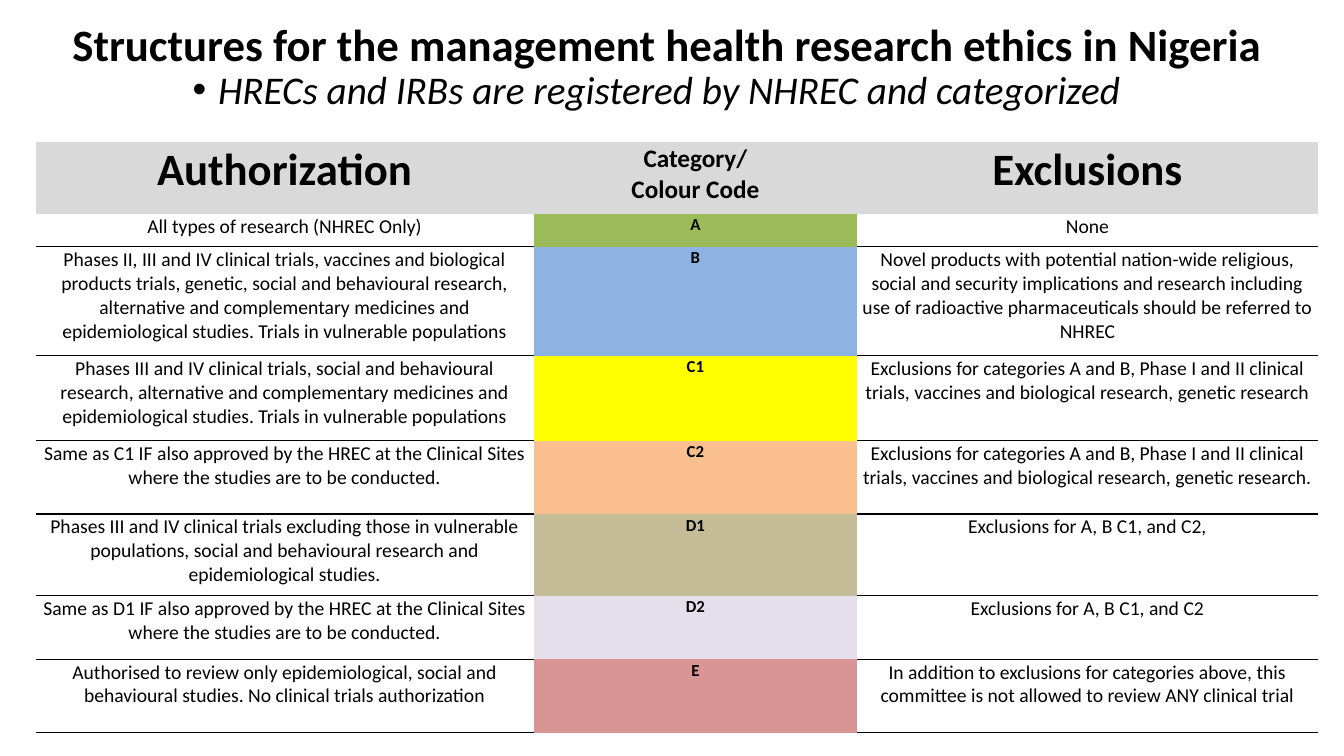
from lxml.etree import SubElement
from pptx import Presentation
from pptx.dml.color import RGBColor
from pptx.enum.text import MSO_ANCHOR, MSO_AUTO_SIZE, PP_ALIGN
from pptx.oxml import parse_xml
from pptx.oxml.ns import nsdecls, qn
from pptx.util import Cm, Pt

FONT = "Calibri"
BLACK = RGBColor(0x00, 0x00, 0x00)
HEADER_GREY = RGBColor(0xD9, 0xD9, 0xD9)
GREEN = RGBColor(0x9B, 0xBB, 0x59)
BLUE = RGBColor(0x8D, 0xB3, 0xE2)
YELLOW = RGBColor(0xFF, 0xFF, 0x00)
ORANGE = RGBColor(0xFA, 0xBF, 0x8F)
KHAKI = RGBColor(0xC4, 0xBC, 0x96)
LILAC = RGBColor(0xE5, 0xDF, 0xEC)
RED = RGBColor(0xD9, 0x95, 0x94)

PLAIN_TABLE_STYLE = "{2D5ABB26-0587-4C30-8999-92F81FD0307C}"
COLUMN_WIDTHS = (12.55, 8.15, 11.61)
ROW_HEIGHTS = (1.8, 0.84, 2.74, 2.14, 1.85, 2.06, 1.6, 1.85)

# Authorization, category, category colour, exclusions
CATEGORIES = [
    ("All types of research (NHREC Only)", "A", GREEN, "None"),
    ("Phases II, III and IV clinical trials, vaccines and biological products "
     "trials, genetic, social and behavioural research, alternative and "
     "complementary medicines and epidemiological studies. Trials in "
     "vulnerable populations", "B", BLUE,
     "Novel products with potential nation-wide religious, social and security "
     "implications and research including use of radioactive pharmaceuticals "
     "should be referred to NHREC"),
    ("Phases III and IV clinical trials, social and behavioural research, "
     "alternative and complementary medicines and epidemiological studies. "
     "Trials in vulnerable populations", "C1", YELLOW,
     "Exclusions for categories A and B, Phase I and II clinical trials, "
     "vaccines and biological research, genetic research"),
    ("Same as C1 IF also approved by the HREC at the Clinical Sites where the "
     "studies are to be conducted.", "C2", ORANGE,
     "Exclusions for categories A and B, Phase I and II clinical trials, "
     "vaccines and biological research, genetic research."),
    ("Phases III and IV clinical trials excluding those in vulnerable "
     "populations, social and behavioural research and epidemiological "
     "studies.", "D1", KHAKI, "Exclusions for A, B C1, and C2,"),
    ("Same as D1 IF also approved by the HREC at the Clinical Sites where the "
     "studies are to be conducted.", "D2", LILAC,
     "Exclusions for A, B C1, and C2"),
    ("Authorised to review only epidemiological, social and behavioural "
     "studies. No clinical trials authorization", "E", RED,
     "In addition to exclusions for categories above, this committee is not "
     "allowed to review ANY clinical trial"),
]


def add_span(para, text, size, bold=False, italic=False):
    span = para.add_run()
    span.text = text
    font = span.font
    font.name, font.size, font.bold, font.italic = FONT, Pt(size), bold, italic
    font.color.rgb = BLACK


def place_text(box, left, top, width, height, anchor):
    """Move a placeholder and return its first paragraph, ready for text."""
    box.left, box.top, box.width, box.height = map(Cm, (left, top, width, height))
    frame = box.text_frame
    frame.auto_size = MSO_AUTO_SIZE.NONE
    frame.word_wrap = True
    frame.vertical_anchor = anchor
    para = frame.paragraphs[0]
    para.alignment = PP_ALIGN.LEFT
    para.line_spacing = 0.9
    para.space_before = Pt(0)
    return para


def add_bullet(para, indent):
    properties = para._p.get_or_add_pPr()
    properties.set("marL", str(indent))
    properties.set("indent", str(-indent))
    SubElement(properties, qn("a:buFont")).set("typeface", "Arial")
    SubElement(properties, qn("a:buChar")).set("char", "•")


def draw_bottom_border(cell):
    line = parse_xml(
        f'<a:lnB {nsdecls("a")} w="{Pt(1)}"><a:solidFill>'
        f'<a:srgbClr val="{BLACK}"/></a:solidFill></a:lnB>')
    cell._tc.get_or_add_tcPr().insert(0, line)


def fill_cell(cell, lines, size, bold=False, colour=None):
    cell.margin_left = cell.margin_right = cell.margin_top = Cm(0.03)
    cell.margin_bottom = Cm(0)
    cell.vertical_anchor = MSO_ANCHOR.TOP
    if colour is None:
        cell.fill.background()
    else:
        cell.fill.solid()
        cell.fill.fore_color.rgb = colour
    frame = cell.text_frame
    for number, text in enumerate(lines):
        para = frame.add_paragraph() if number else frame.paragraphs[0]
        para.alignment = PP_ALIGN.CENTER
        add_span(para, text, size, bold)


def add_category_table(page):
    frame = page.shapes.add_table(
        len(ROW_HEIGHTS), len(COLUMN_WIDTHS), Cm(0.9), Cm(3.58),
        Cm(sum(COLUMN_WIDTHS)), Cm(sum(ROW_HEIGHTS)))
    table = frame.table
    table.horz_banding = False
    table._tbl.tblPr.find(qn("a:tableStyleId")).text = PLAIN_TABLE_STYLE
    for column, width in zip(table.columns, COLUMN_WIDTHS):
        column.width = Cm(width)
    for row, height in zip(table.rows, ROW_HEIGHTS):
        row.height = Cm(height)

    # Header row
    headers = [(["Authorization"], 32), (["Category/", "Colour Code"], 18),
               (["Exclusions"], 32)]
    for column, (lines, size) in enumerate(headers):
        fill_cell(table.cell(0, column), lines, size, True, HEADER_GREY)

    # One row per category
    for row, (authorization, category, colour, exclusions) in enumerate(CATEGORIES, 1):
        fill_cell(table.cell(row, 1), [category], 12, True, colour)
        for column, text in ((0, authorization), (2, exclusions)):
            fill_cell(table.cell(row, column), [text], 14)
            draw_bottom_border(table.cell(row, column))


def main():
    deck = Presentation()
    deck.slide_width, deck.slide_height = Cm(33.87), Cm(19.05)
    page = deck.slides.add_slide(deck.slide_layouts[1])

    # Title and subtitle bullet
    title = place_text(page.shapes.title, 1.57, 0, 32.3, 2.36, MSO_ANCHOR.MIDDLE)
    add_span(title, "Structures for the management health research ethics in Nigeria",
             32, bold=True)
    subtitle = place_text(page.placeholders[1], 4.6, 1.65, 27.08, 3.12, MSO_ANCHOR.TOP)
    add_bullet(subtitle, Cm(0.64))
    add_span(subtitle, "HRECs and IRBs are registered by NHREC and categorized",
             28, italic=True)

    add_category_table(page)
    deck.save("out.pptx")


if __name__ == "__main__":
    main()
